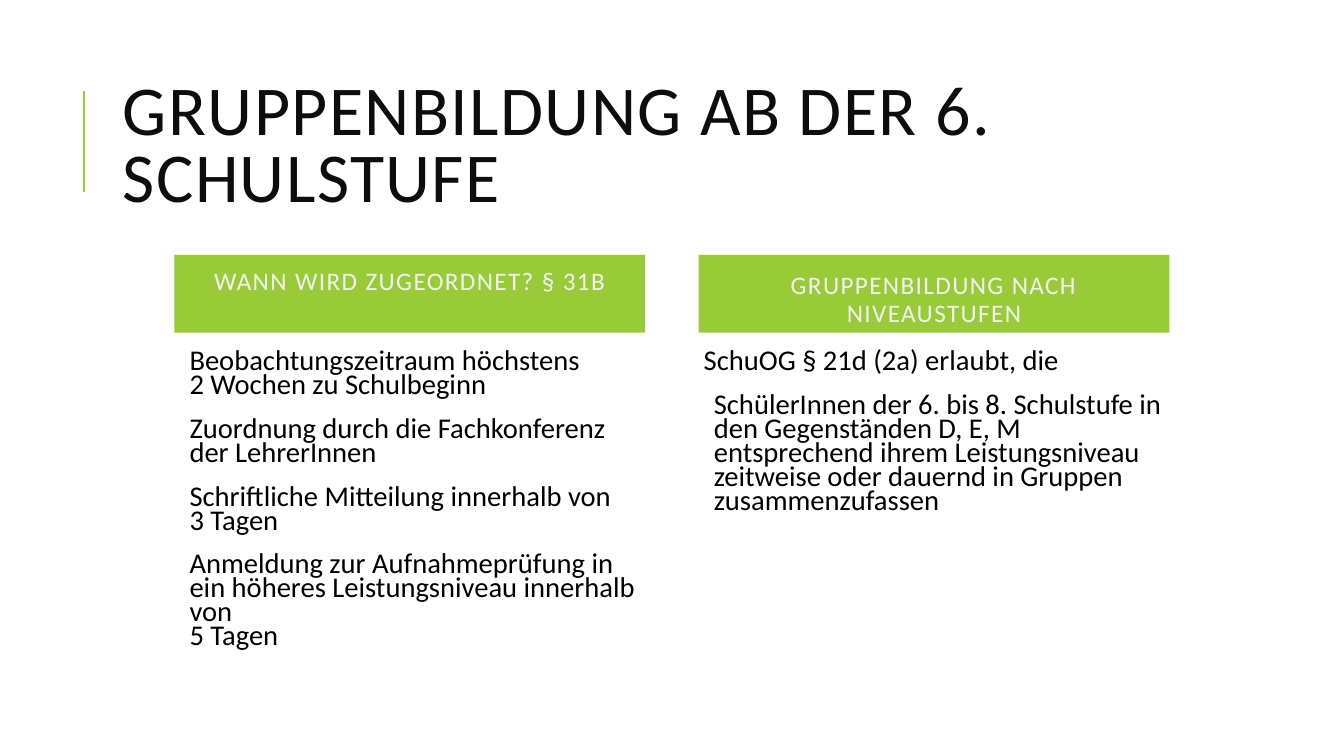
"""Build the slide on forming groups from the sixth school level."""
import pptx
import pptx.util
import pptx.dml.color
import pptx.enum.shapes
import pptx.enum.text
import pptx.oxml.ns
from lxml import etree

TITLE = "GRUPPENBILDUNG AB DER 6. SCHULSTUFE"
COLS = [
    {"head": "WANN WIRD ZUGEORDNET? § 31B", "foot": 0.36, "body": [
        ("Beobachtungszeitraum höchstens\v2 Wochen zu Schulbeginn", 0.1),
        ("Zuordnung durch die Fachkonferenz der LehrerInnen", 0.1),
        ("Schriftliche Mitteilung innerhalb von\v3 Tagen", 0.1),
        ("Anmeldung zur Aufnahmeprüfung in ein höheres Leistungsniveau "
         "innerhalb von\v5 Tagen", 0.1)]},
    {"head": "GRUPPENBILDUNG NACH NIVEAUSTUFEN", "foot": 0.05, "body": [
        ("SchuOG § 21d (2a) erlaubt, die", 0),
        ("SchülerInnen der 6. bis 8. Schulstufe in den Gegenständen D, E, M "
         "entsprechend ihrem Leistungsniveau zeitweise oder dauernd in "
         "Gruppen zusammenzufassen", 0.1)]},
]
COLOURS = {"green": "99CB38", "title": "0D0D0D", "head": "F2F2F2", "body": "000000"}
FONT = "Calibri"
WIDE, HIGH = 13.33, 7.5
LEFT, STEP, COL = 1.73, 5.2, 4.67
HEAD = (2.53, 0.77)
BODY = (3.44, 2.84)
PAD = 0.05

inch = pptx.util.Inches
ANCHOR = pptx.enum.text.MSO_ANCHOR
ALIGN = pptx.enum.text.PP_ALIGN


def shade(name):
    return pptx.dml.color.RGBColor.from_string(COLOURS[name])


def write(shape, paras, role, size, space, anchor, align=ALIGN.LEFT,
          pads=(PAD,) * 4, track=0):
    frame = shape.text_frame
    frame.word_wrap = True
    frame.vertical_anchor = anchor
    (frame.margin_left, frame.margin_top,
     frame.margin_right, frame.margin_bottom) = map(inch, pads)
    for i, (text, indent) in enumerate(paras):
        para = frame.add_paragraph() if i else frame.paragraphs[0]
        para.text = text
        para.alignment = align
        para.line_spacing = space
        para.space_before = pptx.util.Pt(12 if i else 0)
        para.space_after = pptx.util.Pt(2 if role != "title" else 0)
        if indent:
            para._p.get_or_add_pPr().set("marL", str(inch(indent)))
        font = para.font
        font.name, font.size = FONT, pptx.util.Pt(size)
        font.color.rgb = shade(role)
        if track:
            for run in para.runs:
                run._r.get_or_add_rPr().set("spc", str(track * 100))


def main():
    deck = pptx.Presentation()
    deck.slide_width, deck.slide_height = inch(WIDE), inch(HIGH)
    slide = deck.slides.add_slide(deck.slide_layouts[6])
    shapes = slide.shapes

    rule = shapes.add_connector(pptx.enum.shapes.MSO_CONNECTOR.STRAIGHT,
                                *map(inch, (0.83, 1.9, 0.83, 0.9)))
    rule.line.color.rgb = shade("green")
    rule.line.width = pptx.util.Pt(1.5)
    etree.SubElement(rule._element.spPr, pptx.oxml.ns.qn("a:effectLst"))

    title = shapes.add_textbox(*map(inch, (1.12, 0.83, 9.73, 1.3)))
    write(title, [(TITLE, 0)], "title", 50, 0.8, ANCHOR.MIDDLE,
          pads=(0.1, 0.05, 0.1, 0.05), track=1)

    for i, col in enumerate(COLS):
        left = LEFT + i * STEP
        head = shapes.add_shape(pptx.enum.shapes.MSO_SHAPE.RECTANGLE,
                                *map(inch, (left, HEAD[0], COL, HEAD[1])))
        head.shadow.inherit = False
        head.fill.solid()
        head.fill.fore_color.rgb = shade("green")
        head.line.fill.background()
        write(head, [(col["head"], 0)], "head", 18, 0.9, ANCHOR.BOTTOM,
              ALIGN.CENTER, (PAD, PAD, PAD, col["foot"]), 1)
        body = shapes.add_textbox(*map(inch, (left, BODY[0], COL, BODY[1])))
        write(body, col["body"], "body", 20.4, 0.7, ANCHOR.TOP)

    deck.save("out.pptx")


if __name__ == "__main__":
    main()
